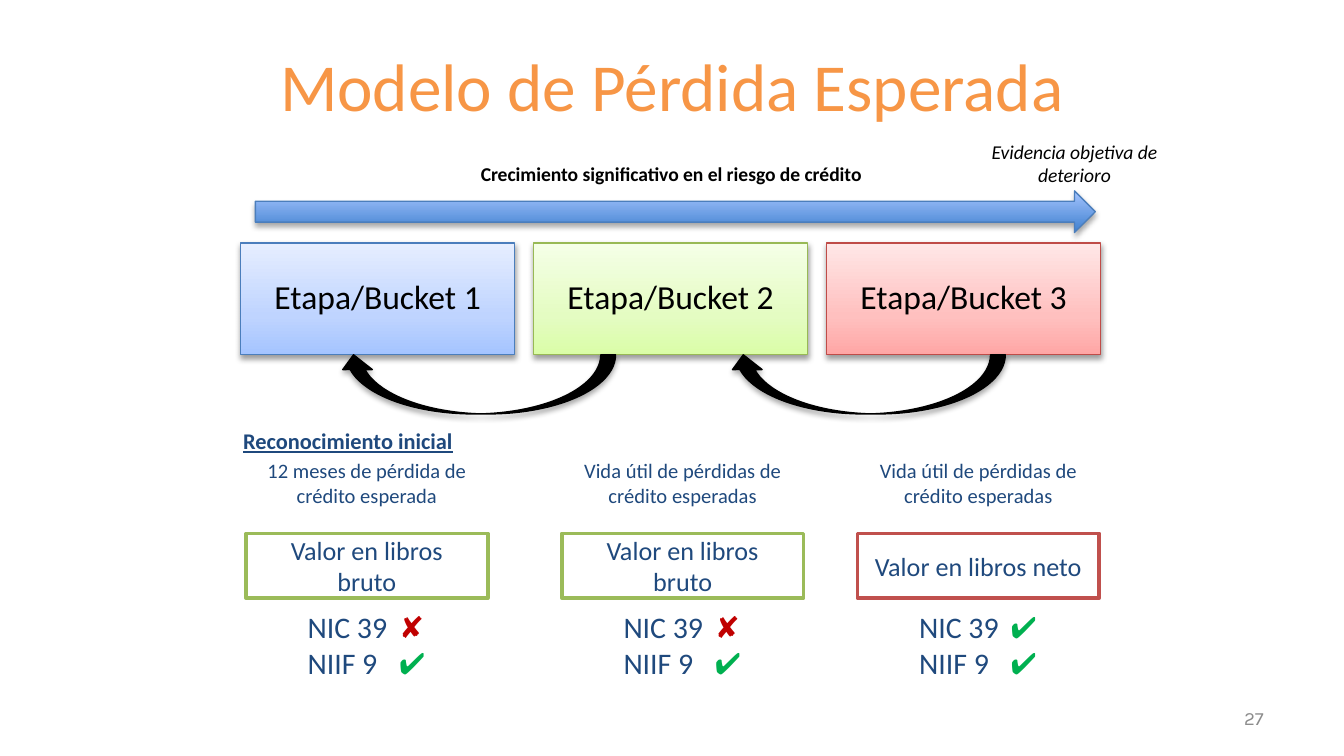
from lxml import etree
from pptx import Presentation
from pptx.dml.color import RGBColor
from pptx.enum import shapes, text
from pptx.oxml.ns import qn
from pptx.util import Inches, Pt

NAVY, BLACK, GREEN, RED = "1F497D", "000000", "9BBB59", "C0504D"
YES, NO = ("✔", "00B050"), ("✘", "C00000")
LEFT, CENTER, RIGHT = text.PP_ALIGN.LEFT, text.PP_ALIGN.CENTER, text.PP_ALIGN.RIGHT

# label, line colour, gradient from bottom to top
STAGES = [
    ("Etapa/Bucket 1", "4B7EBC", [(0, "A4C4FF"), (35, "BFD4FF"), (100, "E6EEFF")]),
    ("Etapa/Bucket 2", "98B955", [(0, "DAFDA7"), (35, "E4FCC2"), (100, "F5FFE7")]),
    ("Etapa/Bucket 3", "BF4C48", [(0, "FFA6A5"), (35, "FFC0BF"), (100, "FFE7E7")]),
]
STAGE_LEFT, STAGE_STEP = 1.79, 2.18

# column centre, expected loss, carrying amount, its frame colour, standards
TREATMENTS = [
    (2.73, "12 meses de pérdida de crédito esperada", "Valor en libros bruto", GREEN,
     [("NIC 39", NO), ("NIIF 9", YES)]),
    (5.08, "Vida útil de pérdidas de crédito esperadas", "Valor en libros bruto", GREEN,
     [("NIC 39", NO), ("NIIF 9", YES)]),
    (7.28, "Vida útil de pérdidas de crédito esperadas", "Valor en libros neto", RED,
     [("NIC 39", YES), ("NIIF 9", YES)]),
]

# words, box, size, colour, alignment, anchored in the middle, styles, font
LABELS = [
    ("Modelo de Pérdida Esperada", (0.5, 0.3, 9, 0.66), 36, "F79646", CENTER, True, "", "Calibri"),
    ("Crecimiento significativo en el riesgo de crédito", (2.85, 1.13, 4.29, 0.32),
     10.5, BLACK, CENTER, True, "b", "Calibri"),
    ("Evidencia objetiva de deterioro", (7.17, 0.99, 1.65, 0.45),
     10.5, BLACK, CENTER, True, "i", "Calibri"),
    ("Reconocimiento inicial", (1.71, 3.13, 1.78, 0.3), 12, NAVY, LEFT, False, "bu", "Calibri"),
    ("27", (7.17, 5.21, 2.33, 0.3), 10, "8C8C8C", RIGHT, False, "", "Karla"),
]

deck = Presentation()
deck.slide_width = Inches(10)
deck.slide_height = deck.slide_width * 9 // 16
slide = deck.slides.add_slide(deck.slide_layouts[6])


def rgb(value):
    return RGBColor.from_string(value)


def add_run(paragraph, words, size, color, styles="", font="Calibri"):
    run = paragraph.add_run()
    run.text = words
    run.font.name, run.font.size = font, Pt(size)
    run.font.color.rgb = rgb(color)
    run.font.bold = "b" in styles
    run.font.italic = "i" in styles
    run.font.underline = "u" in styles


def first_paragraph(shape, align=CENTER, middle=True):
    frame = shape.text_frame
    frame.word_wrap = True
    frame.vertical_anchor = text.MSO_ANCHOR.MIDDLE if middle else text.MSO_ANCHOR.TOP
    frame.paragraphs[0].alignment = align
    return frame.paragraphs[0]


def add_label(words, box, size, color, align, middle, styles="", font="Calibri"):
    label = slide.shapes.add_textbox(*map(Inches, box))
    add_run(first_paragraph(label, align, middle), words, size, color, styles, font)


def add_block(kind, box, fill, line, weight=0.75, shadow=None):
    """fill is a colour or a list of gradient stops; shadow is (opacity %, distance pt)."""
    block = slide.shapes.add_shape(kind, *map(Inches, box))
    if isinstance(fill, str):
        block.fill.solid()
        block.fill.fore_color.rgb = rgb(fill)
    else:
        block.fill.gradient()
        block.fill.gradient_angle = 90
        stops = block._element.spPr.find(".//" + qn("a:gsLst"))
        for old in list(stops):
            stops.remove(old)
        for position, color in fill:
            stop = etree.SubElement(stops, qn("a:gs"), pos=str(position * 1000))
            etree.SubElement(stop, qn("a:srgbClr"), val=color)
    block.line.color.rgb = rgb(line)
    block.line.width = Pt(weight)
    block.shadow.inherit = False
    if shadow:
        opacity, distance = shadow
        effects = block._element.spPr.find(qn("a:effectLst"))
        outer = etree.SubElement(effects, qn("a:outerShdw"), blurRad=str(Pt(3.1)),
                                 dist=str(Pt(distance)), dir="5400000", rotWithShape="0")
        color = etree.SubElement(outer, qn("a:srgbClr"), val=BLACK)
        etree.SubElement(color, qn("a:alpha"), val=str(opacity * 1000))
    return block


def add_standards(center, standards):
    """Names on the left, marks lined up on a tab stop."""
    box = slide.shapes.add_textbox(*map(Inches, (center - 0.57, 4.48, 1.13, 0.64)))
    frame = box.text_frame
    frame.word_wrap = True
    frame.margin_left, frame.margin_right = Inches(0.13), 0
    for index, (name, (mark, color)) in enumerate(standards):
        paragraph = frame.add_paragraph() if index else frame.paragraphs[0]
        paragraph.alignment = LEFT
        tabs = etree.SubElement(paragraph._p.get_or_add_pPr(), qn("a:tabLst"))
        etree.SubElement(tabs, qn("a:tab"), pos=str(Inches(0.68)), algn="l")
        add_run(paragraph, name + "\t", 16, NAVY)
        add_run(paragraph, mark, 16, color)


for index, (name, line, gradient) in enumerate(STAGES):
    stage = add_block(shapes.MSO_SHAPE.RECTANGLE,
                      (STAGE_LEFT + index * STAGE_STEP, 1.81, 2.04, 0.83),
                      gradient, line, shadow=(38, 1.6))
    paragraph = first_paragraph(stage)
    paragraph.line_spacing = 0.9
    add_run(paragraph, name, 18, BLACK)

for left in (5.42, 2.52):
    return_arrow = add_block(shapes.MSO_SHAPE.CURVED_DOWN_ARROW, (left, 2.64, 2.06, 0.44),
                             BLACK, BLACK, shadow=(35, 1.8))
    return_arrow.rotation = 180

for center, loss, amount, frame_color, standards in TREATMENTS:
    add_label(loss, (center - 0.97, 3.36, 1.94, 0.47), 11, NAVY, CENTER, False)
    carrying = add_block(shapes.MSO_SHAPE.RECTANGLE, (center - 0.9, 3.97, 1.8, 0.48),
                         "FFFFFF", frame_color, 2)
    add_run(first_paragraph(carrying), amount, 14, NAVY)
    add_standards(center, standards)

add_block(shapes.MSO_SHAPE.RIGHT_ARROW, (1.9, 1.42, 6.25, 0.31),
          [(0, "3F80CE"), (100, "A4C4FF")], "4B7EBC", shadow=(35, 1.8))

for label in LABELS:
    add_label(*label)

deck.save("out.pptx")
